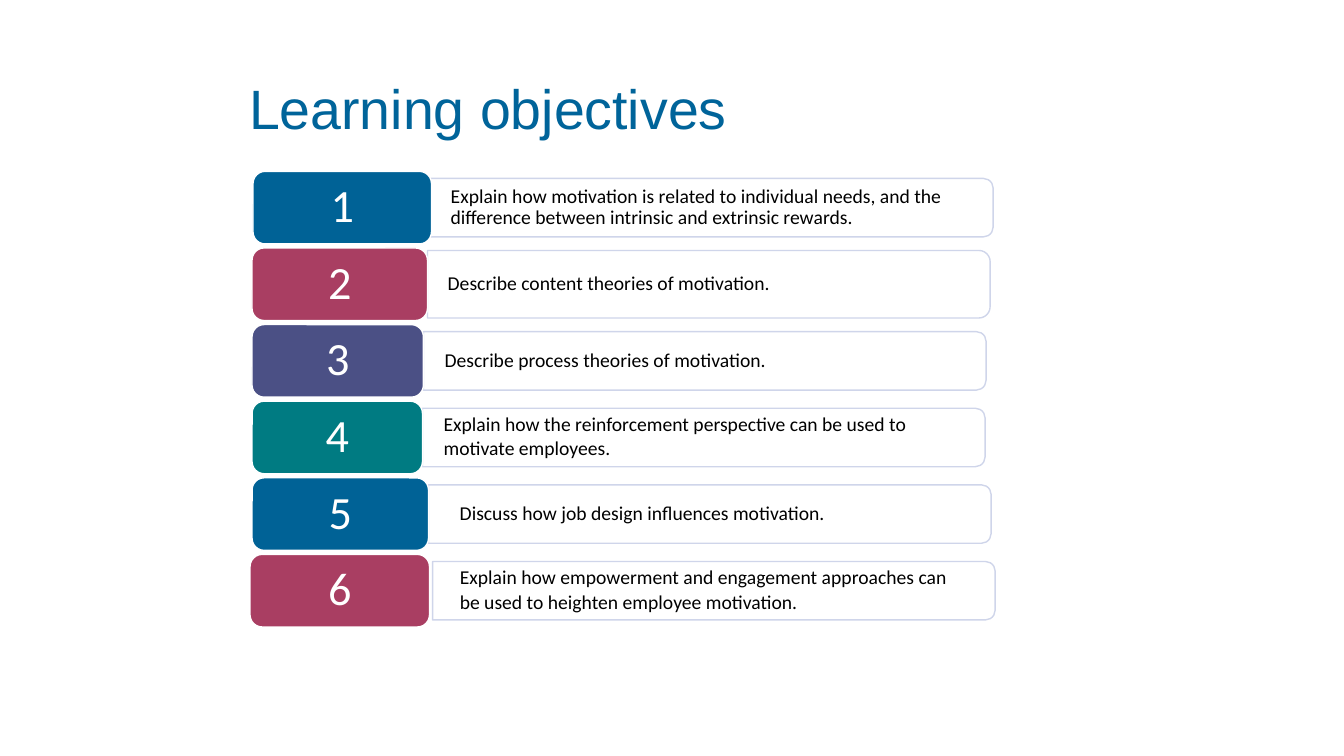
from pptx import Presentation
from pptx.dml.color import RGBColor
from pptx.enum.shapes import MSO_SHAPE
from pptx.enum.text import MSO_ANCHOR, MSO_AUTO_SIZE, PP_ALIGN
from pptx.util import Inches, Pt

COLORS = {
    "title": "00649A",
    "blue": "006296",
    "berry": "A93E62",
    "indigo": "4B5085",
    "teal": "007B82",
    "white": "FFFFFF",
    "black": "000000",
    "outline": "CFD5EA",
}

# badge colour, badge left, badge width, bar left, bar height, text indent, lines
OBJECTIVES = [
    ("blue", 2.51, 1.77, 4.27, 0.58, 0.2,
     ["Explain how motivation is related to individual needs, and the "
      "difference between intrinsic and extrinsic rewards."]),
    ("berry", 2.5, 1.74, 4.24, 0.67, 0.2,
     ["Describe content theories of motivation."]),
    ("indigo", 2.5, 1.7, 4.2, 0.58, 0.21,
     ["Describe process theories of motivation."]),
    ("teal", 2.5, 1.69, 4.19, 0.58, 0.21,
     ["Explain how the reinforcement perspective can be used to",
      "motivate employees."]),
    ("blue", 2.5, 1.75, 4.25, 0.58, 0.31,
     ["Discuss how job design influences motivation."]),
    ("berry", 2.48, 1.78, 4.29, 0.58, 0.27,
     ["Explain how empowerment and engagement approaches can",
      "be used to heighten employee motivation."]),
]
FIRST_CENTER = 2.06
ROW_PITCH = 0.76
BADGE_HEIGHT = 0.72
BAR_LENGTH = 5.58


def color(name):
    """Return the named colour."""
    return RGBColor.from_string(COLORS[name])


def format_paragraph(paragraph, size, font_name, color_name, alignment=PP_ALIGN.LEFT):
    """Set the font, alignment and line spacing of a paragraph."""
    paragraph.alignment = alignment
    paragraph.line_spacing = 0.9
    paragraph.font.size = Pt(size)
    paragraph.font.name = font_name
    paragraph.font.color.rgb = color(color_name)


def set_frame(frame, anchor, margin=0):
    """Set wrapping, anchor and equal margins of a text frame."""
    frame.word_wrap = True
    frame.auto_size = MSO_AUTO_SIZE.NONE
    frame.vertical_anchor = anchor
    frame.margin_left = frame.margin_right = Inches(margin)
    frame.margin_top = frame.margin_bottom = Inches(margin)


def add_box(slide, kind, left, top, width, height, fill, line):
    """Add a filled and outlined preset shape."""
    shape = slide.shapes.add_shape(
        kind, Inches(left), Inches(top), Inches(width), Inches(height))
    shape.shadow.inherit = False
    shape.fill.solid()
    shape.fill.fore_color.rgb = color(fill)
    shape.line.color.rgb = color(line)
    shape.line.width = Pt(1)
    return shape


def add_bar(slide, left, center, height):
    """Add a horizontal bar whose right corners are rounded."""
    bar = add_box(slide, MSO_SHAPE.ROUND_2_SAME_RECTANGLE,
                  left + (BAR_LENGTH - height) / 2, center - BAR_LENGTH / 2,
                  height, BAR_LENGTH, "white", "outline")
    bar.rotation = 90


def add_description(slide, left, center, width, lines):
    """Add the wording of an objective, one paragraph per line."""
    height = 0.52
    box = slide.shapes.add_textbox(
        Inches(left), Inches(center - height / 2), Inches(width), Inches(height))
    frame = box.text_frame
    set_frame(frame, MSO_ANCHOR.MIDDLE)
    frame.text = "\n".join(lines)
    for paragraph in frame.paragraphs:
        format_paragraph(paragraph, 14, "Calibri", "black")
    for paragraph in frame.paragraphs[1:]:
        paragraph.space_before = Pt(2.1)


def add_badge(slide, number, left, center, width, fill):
    """Add the coloured badge that numbers an objective."""
    badge = add_box(slide, MSO_SHAPE.ROUNDED_RECTANGLE, left,
                    center - BADGE_HEIGHT / 2, width, BADGE_HEIGHT, fill, "white")
    set_frame(badge.text_frame, MSO_ANCHOR.MIDDLE, 0.07)
    badge.text_frame.text = str(number)
    format_paragraph(badge.text_frame.paragraphs[0], 33, "Calibri", "white",
                     PP_ALIGN.CENTER)


def add_title(slide, text):
    """Place and format the slide title."""
    title = slide.shapes.title
    title.left, title.top = Inches(2.37), Inches(0.82)
    title.width, title.height = Inches(8.3), Inches(0.63)
    set_frame(title.text_frame, MSO_ANCHOR.BOTTOM, 0.1)
    title.text_frame.margin_top = title.text_frame.margin_bottom = Inches(0.05)
    title.text_frame.text = text
    format_paragraph(title.text_frame.paragraphs[0], 39.6, "Arial", "title")


def main():
    """Build the learning objectives slide."""
    presentation = Presentation()
    presentation.slide_width = Inches(13.33)
    presentation.slide_height = Inches(7.5)
    slide = presentation.slides.add_slide(presentation.slide_layouts[5])
    add_title(slide, "Learning objectives")
    for index, objective in enumerate(OBJECTIVES):
        fill, badge_left, badge_width, bar_left, bar_height, indent, lines = objective
        center = FIRST_CENTER + index * ROW_PITCH
        add_bar(slide, bar_left, center, bar_height)
        add_description(slide, bar_left + indent, center,
                        BAR_LENGTH - indent - 0.1, lines)
        add_badge(slide, index + 1, badge_left, center, badge_width, fill)
    presentation.save("out.pptx")


if __name__ == "__main__":
    main()
